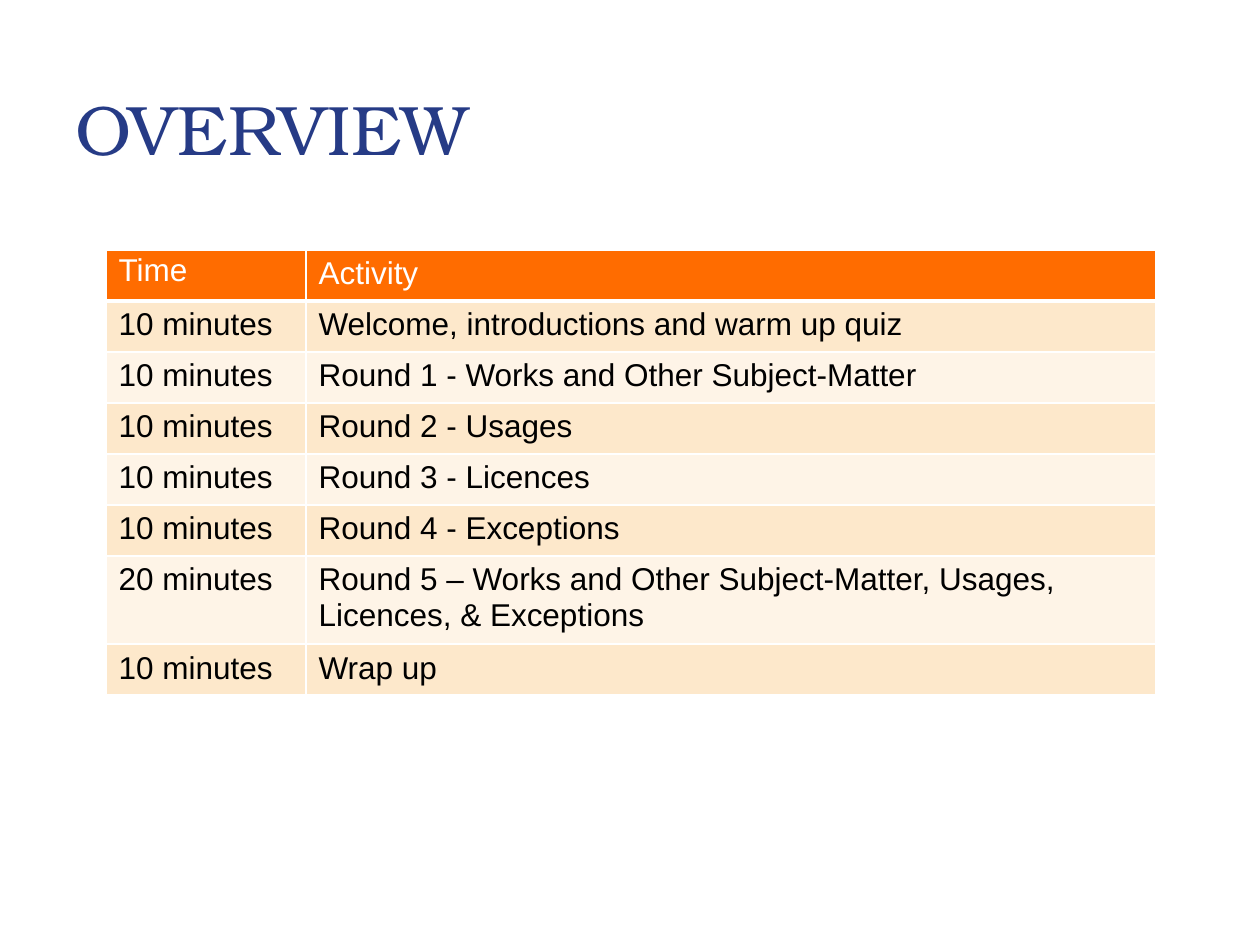
"""Build the workshop overview slide with its timetable."""
from typing import NamedTuple

from lxml import etree
from pptx import Presentation
from pptx import util as u
from pptx.dml.color import RGBColor
from pptx.enum import text
from pptx.oxml.ns import qn

PX = u.Inches(1) // 126
NAVY = RGBColor(0x26, 0x3B, 0x86)
ORANGE = RGBColor(0xFF, 0x6C, 0x00)
PEACH = RGBColor(0xFD, 0xE8, 0xCB)
CREAM = RGBColor(0xFE, 0xF4, 0xE7)
WHITE = RGBColor(0xFF, 0xFF, 0xFF)
BLACK = RGBColor(0x00, 0x00, 0x00)
COLUMN_WIDTHS = (200, 850)
ROW_HEIGHT = 51


class Session(NamedTuple):
    time: str
    activity: str


HEADINGS = Session("Time", "Activity")
SESSIONS = (
    Session("10 minutes", "Welcome, introductions and warm up quiz"),
    Session("10 minutes", "Round 1 - Works and Other Subject-Matter"),
    Session("10 minutes", "Round 2 - Usages"),
    Session("10 minutes", "Round 3 - Licences"),
    Session("10 minutes", "Round 4 - Exceptions"),
    Session("20 minutes", "Round 5 – Works and Other Subject-Matter, "
                          "Usages, Licences, & Exceptions"),
    Session("10 minutes", "Wrap up"),
)


def px(length: int) -> int:
    return length * PX


def add_run(paragraph, wording: str, font: str, size: int, color: RGBColor) -> None:
    run = paragraph.add_run()
    run.text = wording
    run.font.name = font
    run.font.size = u.Pt(size)
    run.font.bold = False
    run.font.color.rgb = color


def add_title(slide, wording: str) -> None:
    title = slide.shapes.add_textbox(px(63), px(21), px(798), px(155))
    frame = title.text_frame
    frame.word_wrap = True
    frame.vertical_anchor = text.MSO_ANCHOR.BOTTOM
    add_run(frame.paragraphs[0], wording, "TeX Gyre Bonum", 40, NAVY)


def add_borders(cell, bottom_width: int) -> None:
    properties = cell._tc.get_or_add_tcPr()
    for side in ("L", "R", "T", "B"):
        width = bottom_width if side == "B" else 1
        border = etree.SubElement(properties, qn(f"a:ln{side}"), w=str(u.Pt(width)))
        fill = etree.SubElement(border, qn("a:solidFill"))
        etree.SubElement(fill, qn("a:srgbClr"), val=str(WHITE))


def fill_row(row, session: Session, fill: RGBColor, color: RGBColor,
             bottom_width: int = 1) -> None:
    row.height = px(ROW_HEIGHT)
    for cell, wording in zip(row.cells, session):
        add_borders(cell, bottom_width)
        cell.fill.solid()
        cell.fill.fore_color.rgb = fill
        add_run(cell.text_frame.paragraphs[0], wording, "Arial", 18, color)


def add_timetable(slide) -> None:
    row_count = len(SESSIONS) + 1
    timetable = slide.shapes.add_table(
        row_count, len(COLUMN_WIDTHS), px(106), px(250),
        px(sum(COLUMN_WIDTHS)), px(ROW_HEIGHT * row_count)).table
    for column, width in zip(timetable.columns, COLUMN_WIDTHS):
        column.width = px(width)
    fill_row(timetable.rows[0], HEADINGS, ORANGE, WHITE, bottom_width=3)
    timetable.cell(0, 0).text_frame.paragraphs[0].line_spacing = 0.9
    for index, session in enumerate(SESSIONS):
        fill = CREAM if index % 2 else PEACH
        fill_row(timetable.rows[index + 1], session, fill, BLACK)


def main() -> None:
    presentation = Presentation()
    presentation.slide_width = px(1260)
    presentation.slide_height = px(945)
    slide = presentation.slides.add_slide(presentation.slide_layouts[6])
    add_title(slide, "OVERVIEW")
    add_timetable(slide)
    presentation.save("out.pptx")


if __name__ == "__main__":
    main()
